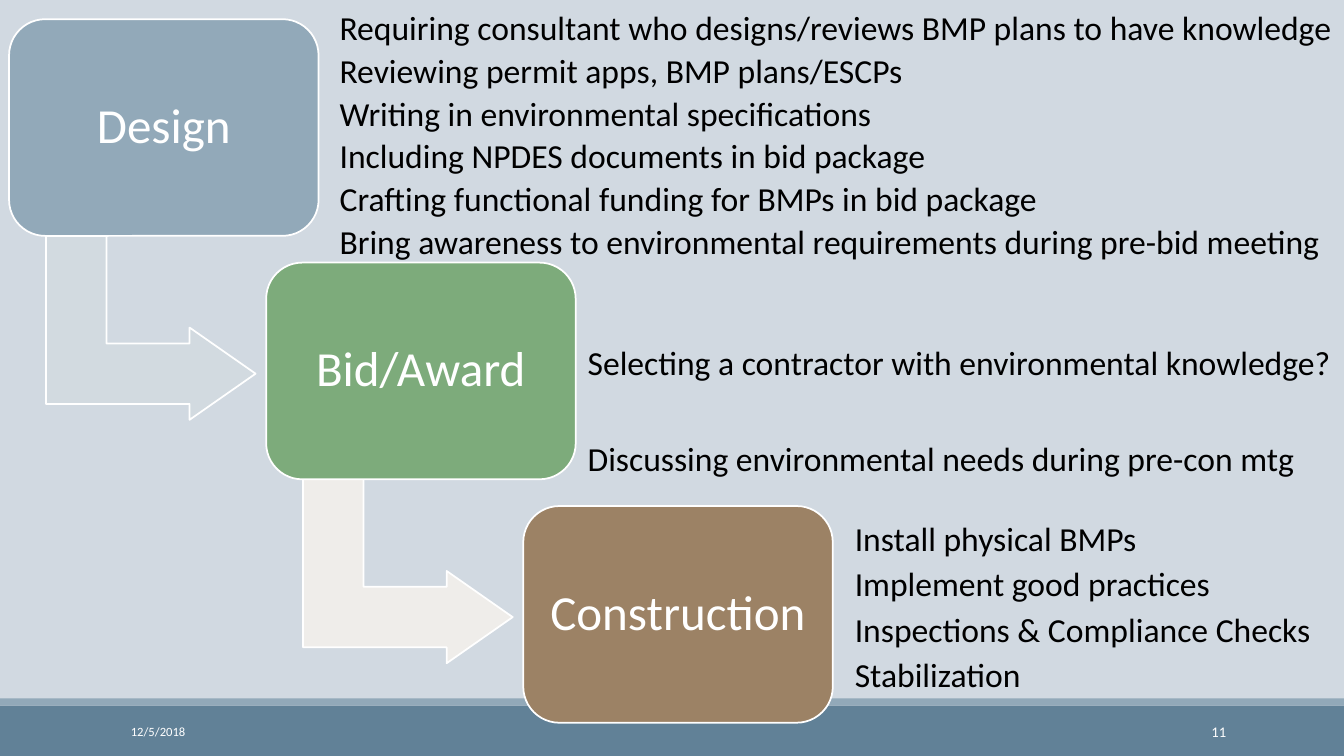
from pptx import Presentation
from pptx.dml.color import RGBColor
from pptx.enum import shapes, text
from pptx.util import Inches, Pt

BACKGROUND = "D1D9E1"
BANDS = [(7, 0.5, "618197"), (6.93, 0.07, "92A9B9")]
PHASES = [
    ("Design", "92A9B9", "D2DAE0"),
    ("Bid/Award", "7DAB7B", "EFEDEA"),
    ("Construction", "9C8265", None),
]
TASKS = [
    (3.27, 0.02, 0.424, 10.06, [
        "Requiring consultant who designs/reviews BMP plans to have knowledge",
        "Reviewing permit apps, BMP plans/ESCPs",
        "Writing in environmental specifications",
        "Including NPDES documents in bid package",
        "Crafting functional funding for BMPs in bid package",
        "Bring awareness to environmental requirements during pre-bid meeting",
    ]),
    (5.73, 3.34, 0.96, 7.6, [
        "Selecting a contractor with environmental knowledge?",
        "Discussing environmental needs during pre-con mtg",
    ]),
    (8.38, 5.09, 0.45, 4.87, [
        "Install physical BMPs",
        "Implement good practices",
        "Inspections & Compliance Checks",
        "Stabilization",
    ]),
]
FOOTER = [
    ("12/5/2018", 1.2, 2.7, 9, text.PP_ALIGN.LEFT),
    ("11", 10.83, 1.43, 10.5, text.PP_ALIGN.RIGHT),
]
PHASE_LEFT, PHASE_TOP = 0.09, 0.19
STEP_X, STEP_Y = 2.55, 2.415
ARROW_ADJUSTMENTS = (0.328, 0.25, 0.358)


def color(hex_string):
    return RGBColor.from_string(hex_string)


def write(holder, words, size=24, ink="000000", align=text.PP_ALIGN.LEFT,
          anchor=text.MSO_ANCHOR.TOP, spacing=None):
    frame = holder.text_frame
    frame.word_wrap = True
    frame.vertical_anchor = anchor
    paragraph = frame.paragraphs[0]
    paragraph.text = words
    paragraph.alignment = align
    paragraph.line_spacing = spacing
    paragraph.font.name = "Calibri"
    paragraph.font.size = Pt(size)
    paragraph.font.color.rgb = color(ink)


def add_block(slide, kind, left, top, width, height, fill, outlined=True):
    block = slide.shapes.add_shape(
        kind, Inches(left), Inches(top), Inches(width), Inches(height))
    block.shadow.inherit = False
    block.fill.solid()
    block.fill.fore_color.rgb = color(fill)
    if outlined:
        block.line.color.rgb = color("FFFFFF")
        block.line.width = Pt(1.25)
    else:
        block.line.fill.background()
    return block


def add_label(slide, words, left, top, width, height, **style):
    label = slide.shapes.add_textbox(
        Inches(left), Inches(top), Inches(width), Inches(height))
    write(label, words, **style)


def main():
    deck = Presentation()
    deck.slide_width, deck.slide_height = Inches(13.33), Inches(7.5)
    slide = deck.slides.add_slide(deck.slide_layouts[6])
    slide.background.fill.solid()
    slide.background.fill.fore_color.rgb = color(BACKGROUND)
    kinds = shapes.MSO_SHAPE

    for top, height, fill in BANDS:
        add_block(slide, kinds.RECTANGLE, 0, top, 13.33, height, fill, outlined=False)
    for words, left, width, size, align in FOOTER:
        add_label(slide, words, left, 7.06, width, 0.4, size=size, ink="FFFFFF",
                  align=align, anchor=text.MSO_ANCHOR.MIDDLE)

    for step, (name, fill, arrow_fill) in enumerate(PHASES):
        left, top = PHASE_LEFT + step * STEP_X, PHASE_TOP + step * STEP_Y
        if arrow_fill:
            arrow = add_block(slide, kinds.BENT_UP_ARROW, left + 0.49, top + 2.02,
                              1.83, 2.08, arrow_fill)
            arrow.rotation = 90
            for index, value in enumerate(ARROW_ADJUSTMENTS):
                arrow.adjustments[index] = value
        phase = add_block(slide, kinds.ROUNDED_RECTANGLE, left, top, 3.07, 2.15, fill)
        write(phase, name, size=35, ink="FFFFFF", align=text.PP_ALIGN.CENTER,
              anchor=text.MSO_ANCHOR.MIDDLE, spacing=0.9)

    for left, top, pitch, width, lines in TASKS:
        for row, words in enumerate(lines):
            add_label(slide, words, left, top + row * pitch, width, 0.5)

    deck.save("out.pptx")


if __name__ == "__main__":
    main()
